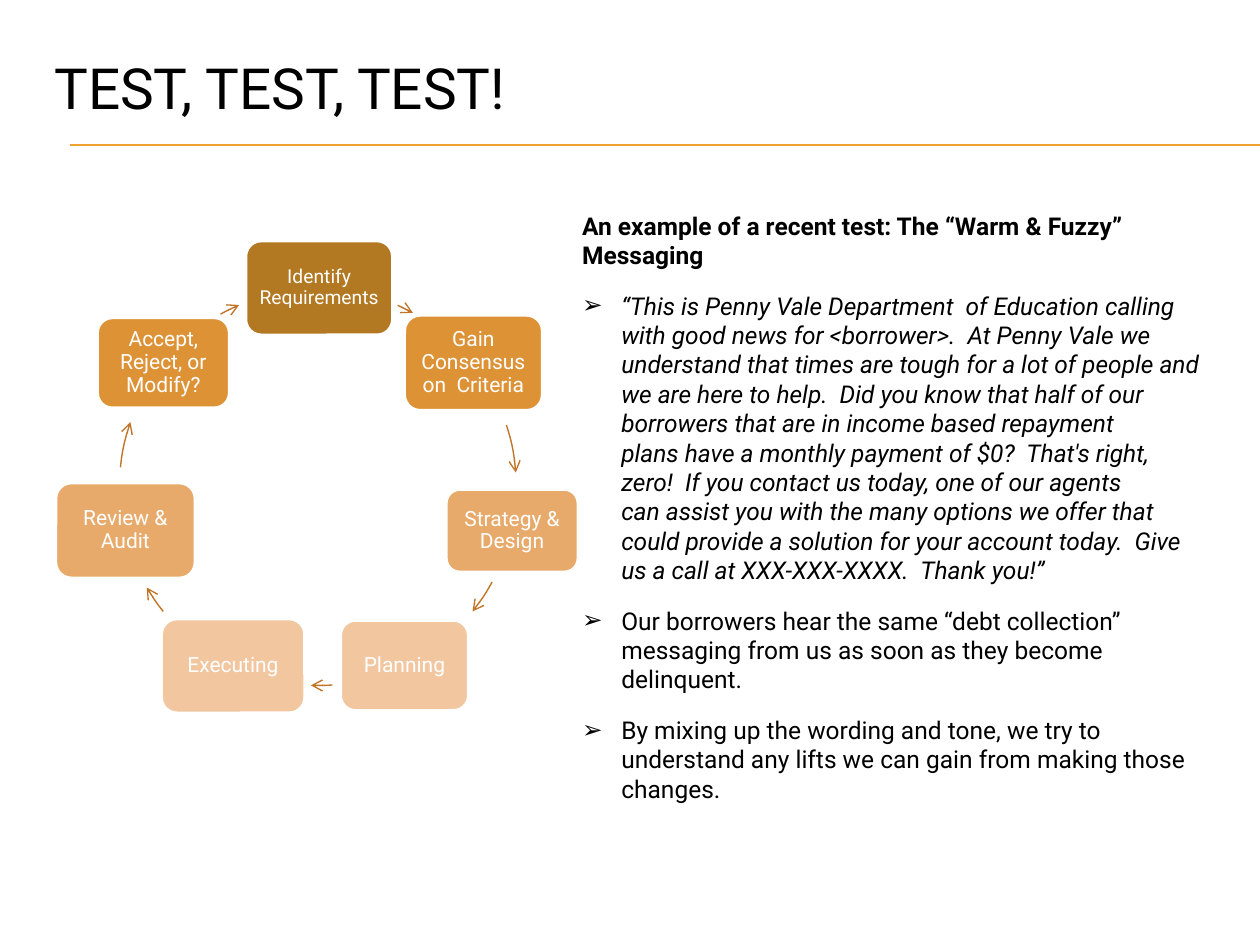
from lxml.etree import SubElement
from pptx import Presentation
from pptx.dml.color import RGBColor
from pptx.enum.shapes import MSO_CONNECTOR, MSO_SHAPE
from pptx.enum.text import MSO_ANCHOR, MSO_AUTO_SIZE, PP_ALIGN
from pptx.oxml.ns import qn
from pptx.util import Cm, Pt

FONT = "Roboto"
BLACK, WHITE, GOLD, RUST = "000000", "FFFFFF", "F0A22E", "C17529"

TITLE = "TEST, TEST, TEST!"
TITLE_BOX = (0.84, 1.06, 24.13, 2.34)
BODY_BOX = (11.48, 4.12, 13.03, 12.32)
RULE_LEFT, RULE_RIGHT, RULE_TOPS = 1.42, 25.4, (2.92, 2.94)

HEADING = "An example of a recent test: The “Warm & Fuzzy” Messaging"
# An underscore stands for a no-break space.
QUOTE = (
    "“This is Penny Vale Department  of Education calling with good news for_<borrower>.__"
    "At Penny Vale we understand that times are tough for a lot of people and we are here "
    "to help.__Did you know that_half of our borrowers that are in income based repayment "
    "plans_have a monthly payment of $0?_ That's right, zero!_ If you contact us today, "
    "one of our agents can_assist you with_the many options we offer that could provide "
    "a solution for your account today._ Give us a call at XXX-XXX-XXXX._ Thank you!”"
).replace("_", chr(160))
# text, bulleted, font format
BODY = [
    (HEADING, False, {"bold": True}),
    (QUOTE, True, {"italic": True}),
    ("Our borrowers hear the same “debt collection” messaging from us as soon as "
     "they become delinquent.", True, {}),
    ("By mixing up the wording and tone, we try to understand any lifts we can gain "
     "from making those changes.", True, {}),
]

# label, text size, fill, box in cm, start and end angle of the arrow that follows
STEPS = [
    ("Identify Requirements", 11, "B27822", (4.95, 4.85, 2.97, 1.91), (293.7, 298.6)),
    ("Gain Consensus on  Criteria", 12, "DD9236", (8.15, 6.35, 2.79, 1.93), (341.8, 355.8)),
    ("Strategy & Design", 12, "E8AA6A", (8.99, 9.86, 2.67, 1.68), (28.6, 38.8)),
    ("Planning", 12, "F2C69F", (6.86, 12.5, 2.59, 1.83), (85.8, 92)),
    ("Executing", 12, "F2C69F", (3.25, 12.47, 2.9, 1.91), (141.2, 149.6)),
    ("Review & Audit", 12, "E8AA6A", (1.12, 9.73, 2.82, 1.93), (185.7, 199.1)),
    ("Accept, Reject, or Modify?", 12, "DD9236", (1.96, 6.4, 2.67, 1.83), (240.6, 246.6)),
]
STEP_MARGIN = 0.1
CYCLE_BOX = (2.41, 5.82, 8, 8)
# Arc adjustments are 60000ths of a degree, scaled down by 100000.
ARC_UNITS_PER_DEGREE = 0.6


def color(hex_text):
    return RGBColor.from_string(hex_text)


def assign(target, values):
    for name, value in values.items():
        setattr(target, name, value)


def place(shape, box):
    assign(shape, dict(zip(("left", "top", "width", "height"), map(Cm, box))))


def style_line(line, hex_text, points):
    line.color.rgb = color(hex_text)
    line.width = Pt(points)


def add_text(paragraph, text, size, hex_text, **extra):
    run = paragraph.add_run()
    run.text = text
    assign(run.font, {"name": FONT, "size": Pt(size), "bold": False, "italic": False, **extra})
    run.font.color.rgb = color(hex_text)


def set_bullet(paragraph, bulleted):
    properties = paragraph._p.get_or_add_pPr()
    indent = Cm(0.79) if bulleted else 0
    properties.set("marL", str(indent))
    properties.set("indent", str(-indent))
    if bulleted:
        SubElement(properties, qn("a:buChar"), char="➢")
    else:
        SubElement(properties, qn("a:buNone"))


def add_rule(slide, top):
    rule = slide.shapes.add_connector(
        MSO_CONNECTOR.STRAIGHT, Cm(RULE_LEFT), Cm(top), Cm(RULE_RIGHT), Cm(top))
    style_line(rule.line, GOLD, 0.75)
    SubElement(rule._element.spPr, qn("a:effectLst"))


def fill_title(title):
    place(title, TITLE_BOX)
    assign(title.text_frame, {"vertical_anchor": MSO_ANCHOR.TOP, "margin_top": 0,
                              "word_wrap": True, "auto_size": MSO_AUTO_SIZE.NONE})
    paragraph = title.text_frame.paragraphs[0]
    paragraph.alignment = PP_ALIGN.LEFT
    add_text(paragraph, TITLE, 32.4, BLACK)


def fill_body(body):
    place(body, BODY_BOX)
    frame = body.text_frame
    assign(frame, {"word_wrap": True, "auto_size": MSO_AUTO_SIZE.NONE})
    for index, (text, bulleted, font_format) in enumerate(BODY):
        paragraph = frame.add_paragraph() if index else frame.paragraphs[0]
        paragraph.space_before = Pt(12)
        set_bullet(paragraph, bulleted)
        add_text(paragraph, text, 14, BLACK, **font_format)


def add_step(slide, label, size, fill, box):
    step = slide.shapes.add_shape(MSO_SHAPE.ROUNDED_RECTANGLE, *map(Cm, box))
    step.shadow.inherit = False
    step.fill.solid()
    step.fill.fore_color.rgb = color(fill)
    style_line(step.line, WHITE, 2)
    frame = step.text_frame
    assign(frame, {"word_wrap": True, "vertical_anchor": MSO_ANCHOR.MIDDLE})
    assign(frame, {f"margin_{side}": Cm(STEP_MARGIN)
                   for side in ("left", "top", "right", "bottom")})
    paragraph = frame.paragraphs[0]
    assign(paragraph, {"alignment": PP_ALIGN.CENTER, "line_spacing": 0.9})
    add_text(paragraph, label, size, WHITE)


def add_cycle_arrow(slide, angles):
    arrow = slide.shapes.add_shape(MSO_SHAPE.ARC, *map(Cm, CYCLE_BOX))
    arrow.shadow.inherit = False
    arrow.fill.background()
    for index, angle in enumerate(angles):
        arrow.adjustments[index] = angle * ARC_UNITS_PER_DEGREE
    style_line(arrow.line, RUST, 0.79)
    SubElement(arrow.line._get_or_add_ln(), qn("a:tailEnd"), type="arrow")


def main():
    presentation = Presentation()
    assign(presentation, {"slide_width": Cm(25.4), "slide_height": Cm(19.05)})
    slide = presentation.slides.add_slide(presentation.slide_layouts[1])
    for top in RULE_TOPS:
        add_rule(slide, top)
    fill_title(slide.shapes.title)
    fill_body(slide.placeholders[1])
    for label, size, fill, box, angles in STEPS:
        add_step(slide, label, size, fill, box)
        add_cycle_arrow(slide, angles)
    presentation.save("out.pptx")


if __name__ == "__main__":
    main()
